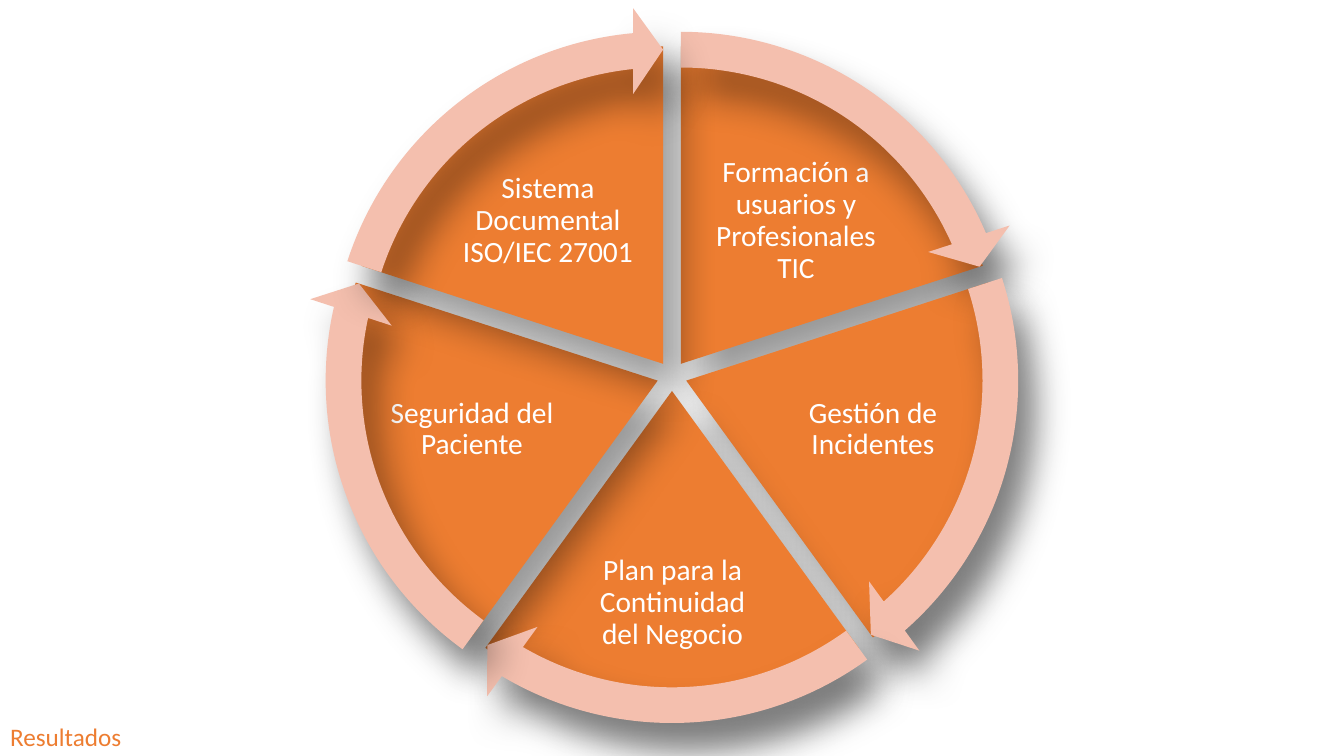
from dataclasses import dataclass
from math import cos, radians, sin

from lxml.etree import SubElement
from pptx import Presentation
from pptx.dml.color import RGBColor
from pptx.enum.shapes import MSO_SHAPE
from pptx.enum.text import MSO_ANCHOR, MSO_AUTO_SIZE, PP_ALIGN
from pptx.oxml.ns import qn
from pptx.util import Pt

SLIDE_WIDTH, SLIDE_HEIGHT = 1344, 756
EMU_PER_PX = 12192000 / SLIDE_WIDTH
ADJUSTMENT_PER_DEGREE = 0.6
HUB_X, HUB_Y = 672, 376
SECTOR_OFFSET = 15
SECTOR_DIAMETER, ARROW_DIAMETER = 635, 714
SECTOR_SWEEP = 72
ARROW_THICKNESS, ARROW_HEAD_ANGLE, ARROW_HEAD_WIDTH = 0.05, 3.28, 0.06
TOPICS = [
    ("Formación a usuarios y Profesionales TIC", (694, 153, 204, 136)),
    ("Gestión de Incidentes", (778, 354, 190, 151)),
    ("Plan para la Continuidad del Negocio", (582, 520, 181, 166)),
    ("Seguridad del Paciente", (377, 354, 190, 151)),
    ("Sistema Documental ISO/IEC 27001", (446, 153, 204, 136)),
]


@dataclass(frozen=True)
class Theme:
    sector: RGBColor = RGBColor(0xED, 0x7D, 0x31)
    arrow: RGBColor = RGBColor(0xF4, 0xBF, 0xAE)
    label: RGBColor = RGBColor(0xFF, 0xFF, 0xFF)
    shadow: str = "000000"
    font: str = "Calibri"
    label_size: Pt = Pt(21)
    title_size: Pt = Pt(18)


THEME = Theme()


def px(length):
    return round(length * EMU_PER_PX)


def add_shadow(shape):
    shape.shadow.inherit = False
    effects = shape._element.spPr.find(qn("a:effectLst"))
    shadow = SubElement(
        effects, qn("a:outerShdw"), blurRad=str(Pt(28)), dist=str(Pt(23)),
        dir=str(59 * 60000), algn="tl", rotWithShape="0")
    tint = SubElement(shadow, qn("a:srgbClr"), val=THEME.shadow)
    SubElement(tint, qn("a:alpha"), val="40000")


def add_round_part(shapes, preset, start, diameter, color, adjustments):
    middle = radians(start + SECTOR_SWEEP / 2)
    left = HUB_X + SECTOR_OFFSET * cos(middle) - diameter / 2
    top = HUB_Y + SECTOR_OFFSET * sin(middle) - diameter / 2
    part = shapes.add_shape(preset, px(left), px(top), px(diameter), px(diameter))
    for index, adjustment in enumerate(adjustments):
        part.adjustments[index] = adjustment
    part.fill.solid()
    part.fill.fore_color.rgb = color
    part.line.fill.background()
    add_shadow(part)


def add_sector(shapes, start):
    end = (start + SECTOR_SWEEP) % 360
    angles = [angle * ADJUSTMENT_PER_DEGREE for angle in (start, end)]
    add_round_part(shapes, MSO_SHAPE.PIE, start, SECTOR_DIAMETER, THEME.sector, angles)


def add_arrow(shapes, start):
    full_turn = 360 * ADJUSTMENT_PER_DEGREE
    tail = start * ADJUSTMENT_PER_DEGREE
    head = (tail + SECTOR_SWEEP * ADJUSTMENT_PER_DEGREE - ARROW_HEAD_ANGLE) % full_turn
    add_round_part(
        shapes, MSO_SHAPE.CIRCULAR_ARROW, start, ARROW_DIAMETER, THEME.arrow,
        [ARROW_THICKNESS, ARROW_HEAD_ANGLE, head, tail, ARROW_HEAD_WIDTH])


def format_text(paragraph, size, color):
    for run in paragraph.runs:
        run.font.name = THEME.font
        run.font.size = size
        run.font.color.rgb = color


def add_label(shapes, topic, box):
    frame = shapes.add_textbox(*map(px, box)).text_frame
    frame.word_wrap = True
    frame.vertical_anchor = MSO_ANCHOR.MIDDLE
    frame.margin_left = frame.margin_right = px(3)
    frame.margin_top = frame.margin_bottom = px(3)
    frame.text = topic
    paragraph = frame.paragraphs[0]
    paragraph.alignment = PP_ALIGN.CENTER
    paragraph.line_spacing = 0.9
    paragraph.space_after = Pt(7)
    format_text(paragraph, THEME.label_size, THEME.label)


def set_title(title, wording):
    title.left, title.top, title.width, title.height = map(px, (0, 716, 180, 40))
    frame = title.text_frame
    frame.text = wording
    frame.word_wrap = True
    frame.auto_size = MSO_AUTO_SIZE.SHAPE_TO_FIT_TEXT
    frame.vertical_anchor = MSO_ANCHOR.TOP
    frame.paragraphs[0].alignment = PP_ALIGN.LEFT
    format_text(frame.paragraphs[0], THEME.title_size, THEME.sector)


def main():
    presentation = Presentation()
    presentation.slide_width = px(SLIDE_WIDTH)
    presentation.slide_height = px(SLIDE_HEIGHT)
    slide = presentation.slides.add_slide(presentation.slide_layouts.get_by_name("Title Only"))
    set_title(slide.shapes.title, "Resultados")
    cycle = slide.shapes.add_group_shape().shapes
    starts = [(270 + SECTOR_SWEEP * step) % 360 for step in range(len(TOPICS))]
    for start, (topic, box) in zip(starts, TOPICS):
        add_sector(cycle, start)
        add_label(cycle, topic, box)
    for start in starts:
        add_arrow(cycle, start)
    presentation.save("out.pptx")


if __name__ == "__main__":
    main()
